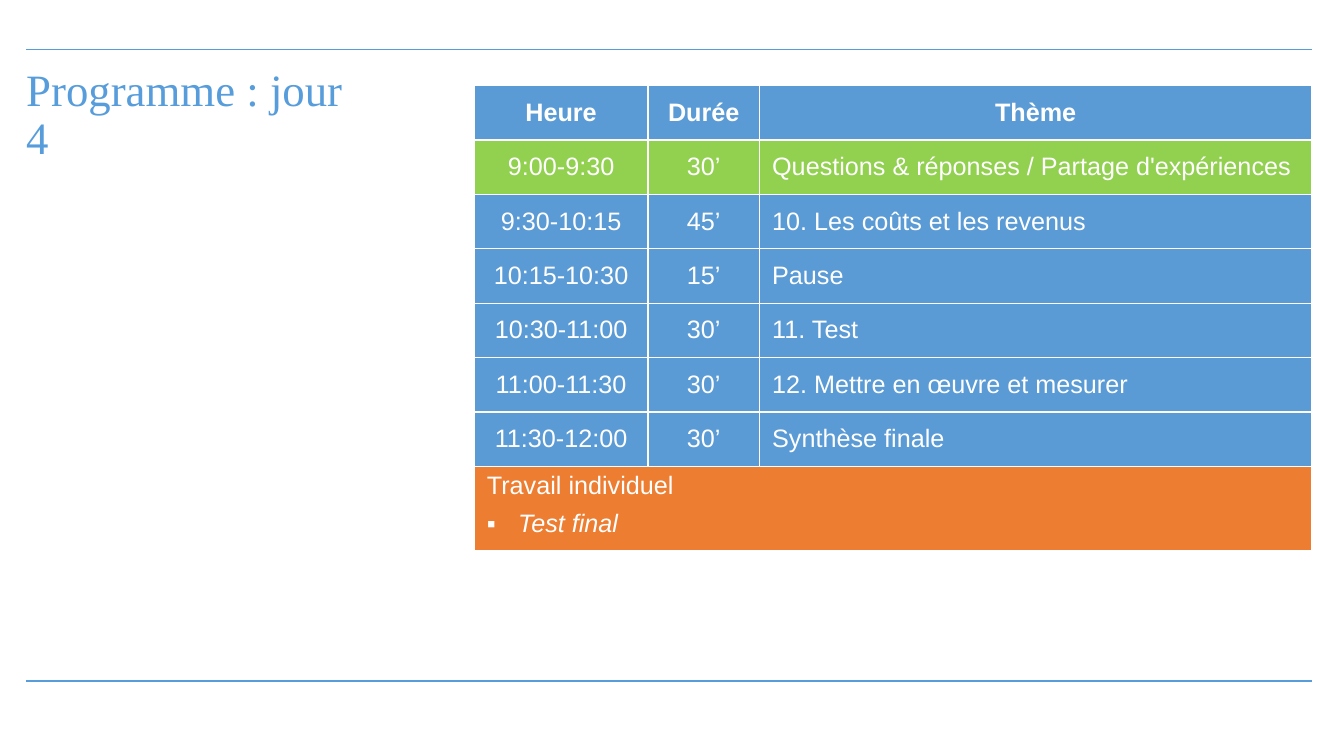
from dataclasses import dataclass

from lxml import etree
from pptx import Presentation
from pptx.dml.color import RGBColor
from pptx.enum.shapes import MSO_CONNECTOR
from pptx.enum.text import MSO_ANCHOR, MSO_AUTO_SIZE, PP_ALIGN
from pptx.oxml.ns import qn
from pptx.util import Cm, Pt

STRAIGHT = MSO_CONNECTOR.STRAIGHT
TOP, MIDDLE = MSO_ANCHOR.TOP, MSO_ANCHOR.MIDDLE
LEFT, CENTER, JUSTIFY = PP_ALIGN.LEFT, PP_ALIGN.CENTER, PP_ALIGN.JUSTIFY
NO_AUTOFIT = MSO_AUTO_SIZE.NONE
TITLE_ONLY = 5

MARGIN_LEFT, MARGIN_RIGHT = 0.66, 33.07
RULE_HEIGHTS = (1.25, 17.16)
TITLE_BOX = (MARGIN_LEFT, 1.7, 8.69, 2.21)
TABLE_LEFT, TABLE_TOP = 11.95, 2.16
COLUMN_WIDTHS = (4.38, 2.81, 13.92)
ROW_HEIGHT, HOMEWORK_HEIGHT = 1.37, 2.12
CELL_INSET = 0.32
BULLET_INDENT = 0.79

HEADINGS = ("Heure", "Durée", "Thème")
SESSIONS = (
    ("9:00-9:30", "30’", "Questions & réponses / Partage d'expériences"),
    ("9:30-10:15", "45’", "10. Les coûts et les revenus"),
    ("10:15-10:30", "15’", "Pause"),
    ("10:30-11:00", "30’", "11. Test"),
    ("11:00-11:30", "30’", "12. Mettre en œuvre et mesurer"),
    ("11:30-12:00", "30’", "Synthèse finale"),
)


@dataclass(frozen=True)
class Theme:
    title_font: str = "Times New Roman"
    table_font: str = "Arial"
    title_size: int = 32
    table_size: int = 18
    accent: str = "579DDB"
    session: str = "5B9BD5"
    discussion: str = "92D050"
    homework: str = "ED7D31"
    light: str = "FFFFFF"
    line_width: int = 1


def apply(target, values):
    for name, value in values.items():
        setattr(target, name, value)


class ProgrammeSlide:
    def __init__(self, presentation, theme):
        self.theme = theme
        self.slide = presentation.slides.add_slide(presentation.slide_layouts[TITLE_ONLY])

    def style(self, paragraph, font, size, color, **extra):
        apply(paragraph.font, {"name": font, "size": Pt(size), **extra})
        paragraph.font.color.rgb = RGBColor.from_string(color)

    def rule(self, height):
        line = self.slide.shapes.add_connector(
            STRAIGHT, Cm(MARGIN_LEFT), Cm(height), Cm(MARGIN_RIGHT), Cm(height))
        line.line.color.rgb = RGBColor.from_string(self.theme.accent)
        line.line.width = Pt(self.theme.line_width)
        etree.SubElement(line.element.spPr, qn("a:effectLst"))

    def title(self, text):
        heading = self.slide.shapes.title
        apply(heading, dict(zip(("left", "top", "width", "height"), map(Cm, TITLE_BOX))))
        frame = heading.text_frame
        apply(frame, {
            "margin_left": 0, "margin_right": 0, "margin_top": 0, "margin_bottom": 0,
            "vertical_anchor": TOP, "word_wrap": True, "auto_size": NO_AUTOFIT,
        })
        frame.text = text
        paragraph = frame.paragraphs[0]
        apply(paragraph, {"alignment": LEFT, "line_spacing": 0.9})
        self.style(paragraph, self.theme.title_font, self.theme.title_size, self.theme.accent)

    def table(self, row_heights):
        table = self.slide.shapes.add_table(
            len(row_heights), len(COLUMN_WIDTHS), Cm(TABLE_LEFT), Cm(TABLE_TOP),
            Cm(sum(COLUMN_WIDTHS)), Cm(sum(row_heights))).table
        for column, width in zip(table.columns, COLUMN_WIDTHS):
            column.width = Cm(width)
        for row, height in zip(table.rows, row_heights):
            row.height = Cm(height)
        return table

    def cell(self, cell, fill, anchor=TOP):
        """Set the insets, white borders and fill of a table cell."""
        inset = Cm(CELL_INSET)
        apply(cell, {
            "margin_left": inset, "margin_right": inset, "margin_top": inset,
            "margin_bottom": inset, "vertical_anchor": anchor,
        })
        properties = cell._tc.get_or_add_tcPr()
        for side in ("a:lnL", "a:lnR", "a:lnT", "a:lnB"):
            border = etree.SubElement(properties, qn(side), w=str(Pt(self.theme.line_width)))
            solid = etree.SubElement(border, qn("a:solidFill"))
            etree.SubElement(solid, qn("a:srgbClr"), val=self.theme.light)
        cell.fill.solid()
        cell.fill.fore_color.rgb = RGBColor.from_string(fill)

    def cell_text(self, paragraph, text, alignment, bold=False, italic=False):
        paragraph.text = text
        paragraph.alignment = alignment
        self.style(paragraph, self.theme.table_font, self.theme.table_size,
                   self.theme.light, bold=bold, italic=italic)

    def table_row(self, table, index, texts, fill, alignments, anchor=TOP, bold=False):
        for column, (text, alignment) in enumerate(zip(texts, alignments)):
            cell = table.cell(index, column)
            self.cell(cell, fill, anchor)
            self.cell_text(cell.text_frame.paragraphs[0], text, alignment, bold)

    def homework_row(self, table, index, heading, task):
        cell = table.cell(index, 0)
        cell.merge(table.cell(index, len(COLUMN_WIDTHS) - 1))
        for column in range(len(COLUMN_WIDTHS)):
            self.cell(table.cell(index, column), self.theme.homework)

        first = cell.text_frame.paragraphs[0]
        apply(first, {"line_spacing": Pt(15), "space_after": Pt(6)})
        self.cell_text(first, heading, JUSTIFY)

        second = cell.text_frame.add_paragraph()
        apply(second, {"line_spacing": Pt(15), "space_before": Pt(6)})
        properties = second._p.get_or_add_pPr()
        properties.set("marL", str(Cm(BULLET_INDENT)))
        properties.set("indent", str(-Cm(BULLET_INDENT)))
        etree.SubElement(properties, qn("a:buFont"), typeface=self.theme.table_font)
        etree.SubElement(properties, qn("a:buChar"), char="▪")
        self.cell_text(second, task, JUSTIFY, italic=True)


def main():
    presentation = Presentation()
    presentation.slide_width, presentation.slide_height = Cm(33.87), Cm(19.05)
    theme = Theme()
    programme = ProgrammeSlide(presentation, theme)

    for height in RULE_HEIGHTS:
        programme.rule(height)
    programme.title("Programme : jour 4")

    homework_index = len(SESSIONS) + 1
    schedule = programme.table([ROW_HEIGHT] * homework_index + [HOMEWORK_HEIGHT])
    programme.table_row(schedule, 0, HEADINGS, theme.session, (CENTER,) * 3, MIDDLE, True)
    for index, session in enumerate(SESSIONS, start=1):
        fill = theme.discussion if index == 1 else theme.session
        programme.table_row(schedule, index, session, fill, (CENTER, CENTER, JUSTIFY))
    programme.homework_row(schedule, homework_index, "Travail individuel", "Test final")

    presentation.save("out.pptx")


if __name__ == "__main__":
    main()
